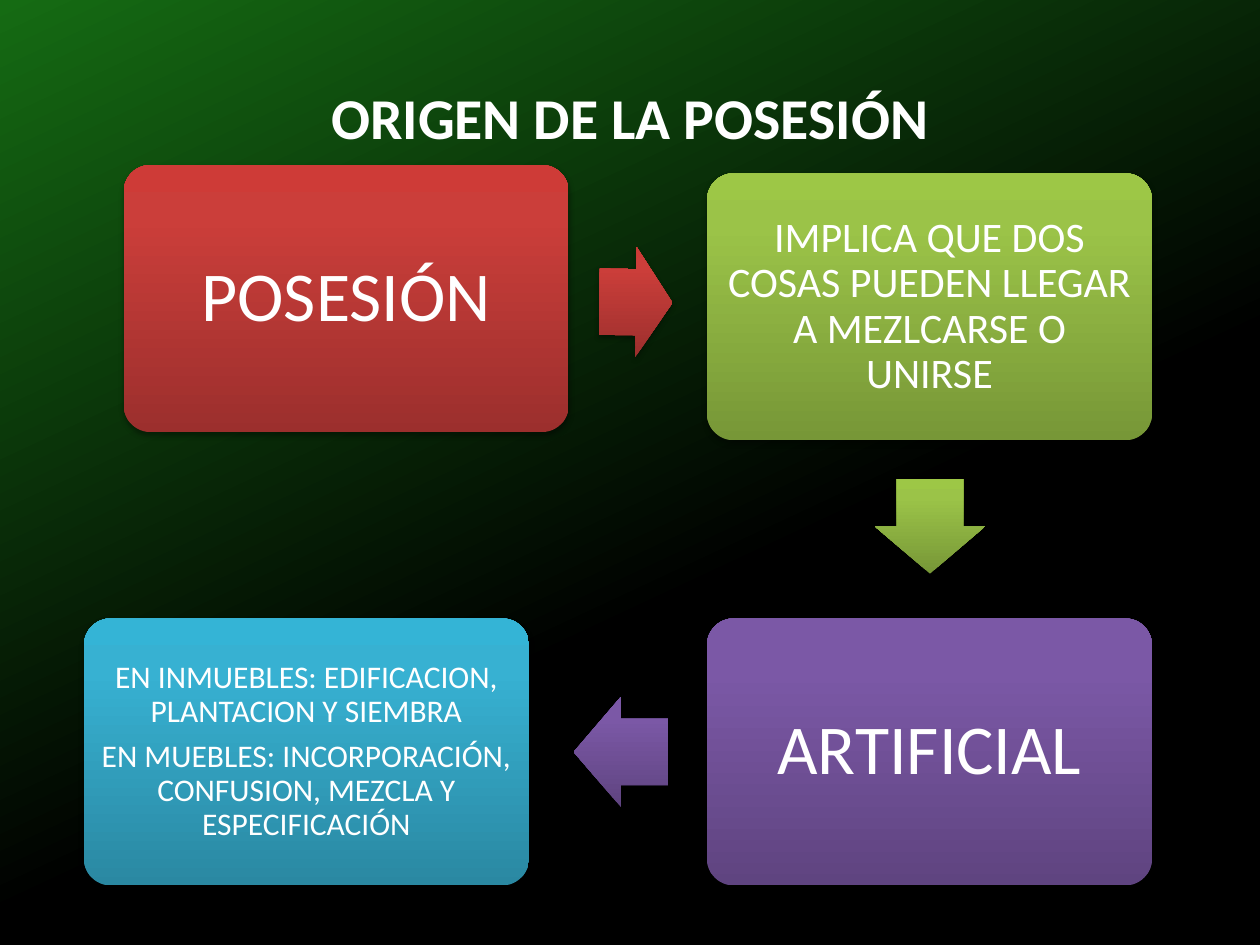
import pptx
import pptx.dml.color
import pptx.enum.shapes
import pptx.enum.text
import pptx.oxml
import pptx.oxml.ns
import pptx.util

Pt = pptx.util.Pt
qn = pptx.oxml.ns.qn
SHAPES = pptx.enum.shapes.MSO_SHAPE
CENTER = pptx.enum.text.PP_ALIGN.CENTER
MIDDLE = pptx.enum.text.MSO_ANCHOR.MIDDLE

# Gradient stops from bottom to top: (percent, colour)
RED = [(0, "9C2F2D"), (80, "CB3E3A"), (100, "CE3B37")]
GREEN = [(0, "779737"), (80, "9BC348"), (100, "9DC746")]
PURPLE = [(0, "5F4480"), (80, "7B58A6"), (100, "7C57A8")]
BLUE = [(0, "2A88A2"), (80, "37B1D2"), (100, "34B4D6")]
BACKGROUND = [(40, "000000"), (100, "156B13")]

BOX_WIDTH, BOX_HEIGHT = 254.3, 152.6
ARROW_HEIGHT = 63


def color(hex_string):
    return pptx.dml.color.RGBColor.from_string(hex_string)


def xml(markup):
    return pptx.oxml.parse_xml(markup.replace(" ", f" {pptx.oxml.ns.nsdecls('a')} ", 1))


def write(frame, text, size, font="Calibri", fill="FFFFFF", bold=False,
          line_spacing=None, space_after=None):
    """Put one centred paragraph in the frame for each line of text."""
    frame.text = text
    frame.vertical_anchor = MIDDLE
    for paragraph in frame.paragraphs:
        paragraph.alignment = CENTER
        paragraph.line_spacing = line_spacing
        paragraph.space_after = space_after
        for run in paragraph.runs:
            run.font.name = font
            run.font.size = Pt(size)
            run.font.bold = bold
            run.font.color.rgb = color(fill)


class SlideBuilder:
    def __init__(self, slide):
        self.slide = slide

    def gradient(self, fill, owner, stops, angle):
        """Fill with a linear gradient that stays upright when its shape turns."""
        fill.gradient()
        old = next(owner.iter(qn("a:gradFill")))
        marks = "".join(f'<a:gs pos="{percent * 1000}"><a:srgbClr val="{value}"/></a:gs>'
                        for percent, value in stops)
        old.getparent().replace(old, xml(
            f'<a:gradFill rotWithShape="0"><a:gsLst>{marks}</a:gsLst>'
            f'<a:lin ang="{angle * 60000}" scaled="0"/></a:gradFill>'))

    def background(self, stops, angle):
        self.gradient(self.slide.background.fill, self.slide.element, stops, angle)

    def title(self, text, left, top, width, height):
        title = self.slide.shapes.title
        title.left, title.top, title.width, title.height = map(Pt, (left, top, width, height))
        write(title.text_frame, text, 33, bold=True)
        title.text_frame.word_wrap = False

    def shape(self, kind, left, top, width, height, stops, adjustments):
        shape = self.slide.shapes.add_shape(kind, Pt(left), Pt(top), Pt(width), Pt(height))
        for index, value in enumerate(adjustments):
            shape.adjustments[index] = value
        self.gradient(shape.fill, shape.element.spPr, stops, 270)
        shape.line.fill.background()
        # Soft shadow straight below
        shape.shadow.inherit = False
        shape.element.spPr.find(qn("a:effectLst")).append(xml(
            f'<a:outerShdw blurRad="{Pt(3.1)}" dist="{Pt(1.8)}" dir="5400000" rotWithShape="0">'
            '<a:srgbClr val="000000"><a:alpha val="35000"/></a:srgbClr></a:outerShdw>'))
        return shape

    def box(self, text, left, top, stops, size, inset):
        box = self.shape(SHAPES.ROUNDED_RECTANGLE, left, top, BOX_WIDTH, BOX_HEIGHT, stops, [0.1])
        frame = box.text_frame
        frame.word_wrap = True
        frame.margin_left = frame.margin_right = Pt(inset)
        frame.margin_top = frame.margin_bottom = Pt(inset)
        write(frame, text, size, line_spacing=0.9, space_after=Pt(size * 0.35))

    def arrow(self, left, top, width, stops, rotation):
        arrow = self.shape(SHAPES.RIGHT_ARROW, left, top, width, ARROW_HEIGHT, stops, [0.6, 0.5])
        arrow.rotation = rotation


def main():
    presentation = pptx.Presentation()
    presentation.slide_width, presentation.slide_height = Pt(720), Pt(540)
    builder = SlideBuilder(presentation.slides.add_slide(presentation.slide_layouts[5]))

    builder.background(BACKGROUND, 245)
    builder.title("ORIGEN DE LA POSESIÓN", 180, 42.9, 360, 47.5)

    # Each box is followed by the arrow that leads to the next one
    right_column, lower_row = 404, 353.4
    builder.box("POSESIÓN", 70.7, 94.3, RED, 40, 12)
    builder.arrow(342.5, 141.2, 41.8, RED, 0.8)
    builder.box("IMPLICA QUE DOS COSAS PUEDEN LLEGAR A MEZLCARSE O UNIRSE",
                right_column, 99, GREEN, 24, 7.2)
    builder.arrow(504.4, 269.3, 54, GREEN, 90)
    builder.box("ARTIFICIAL", right_column, lower_row, PURPLE, 40, 12)
    builder.arrow(327.8, 398.2, 54, PURPLE, 180)
    builder.box("EN INMUEBLES: EDIFICACION, PLANTACION Y SIEMBRA\n"
                "EN MUEBLES: INCORPORACIÓN, CONFUSION, MEZCLA Y ESPECIFICACIÓN",
                48, lower_row, BLUE, 18, 5)

    presentation.save("out.pptx")


if __name__ == "__main__":
    main()
